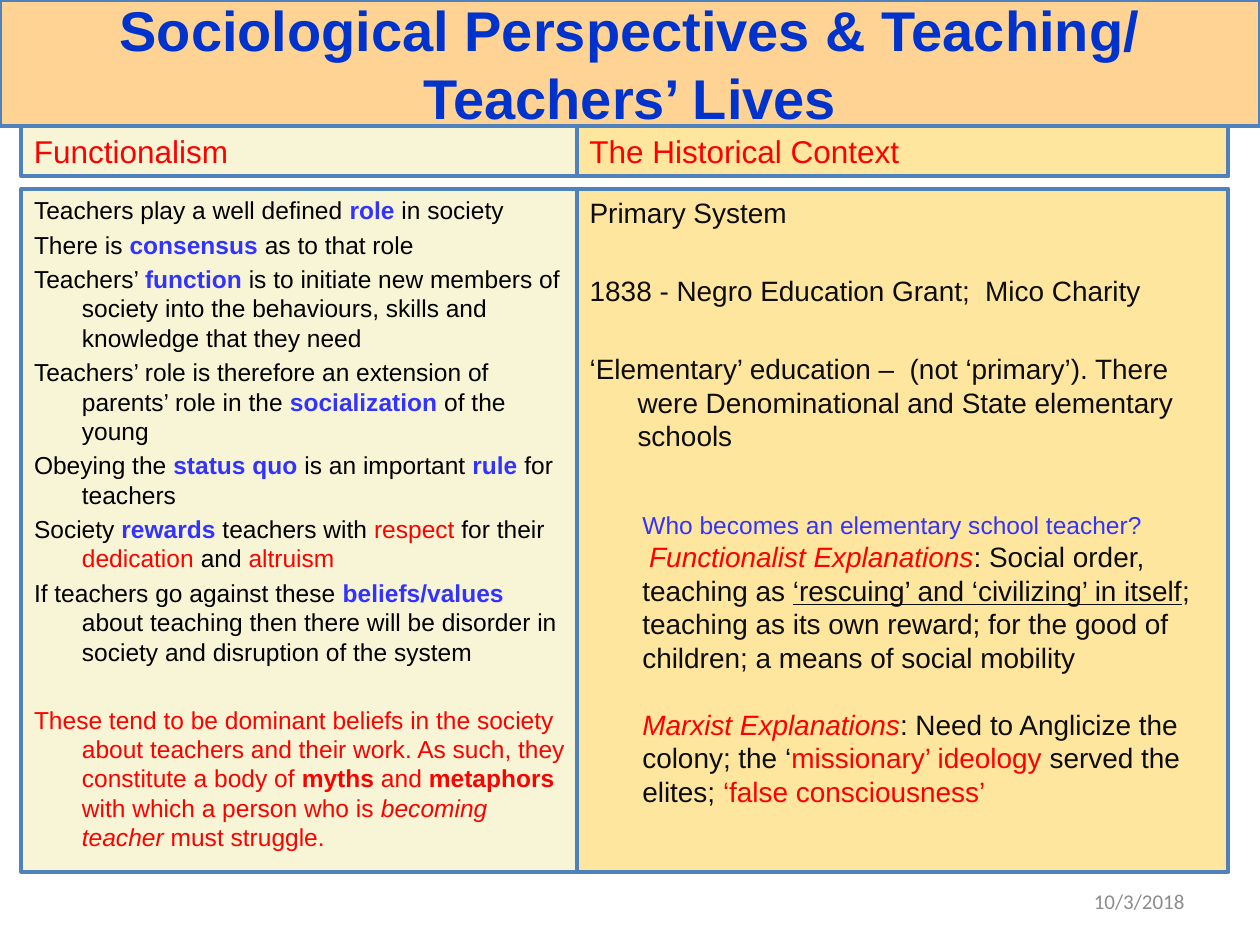
from dataclasses import dataclass

import pptx
import pptx.dml.color
import pptx.enum.shapes
import pptx.enum.text
import pptx.oxml.xmlchemy
import pptx.util
from pptx.util import Inches

BLACK, DARK, RED, BLUE = "000000", "0D0D0D", "FF0000", "3333FF"
TITLE_BLUE, BORDER, GREY = "0033CC", "4F81BD", "8C8C8C"
PEACH, CREAM, GOLD = "FFD393", "F7F5D5", "FFE69F"


@dataclass(frozen=True)
class Run:
    text: str
    color: str = BLACK
    bold: bool = False
    italic: bool = False
    underline: bool = False
    size: float | None = None


@dataclass(frozen=True)
class Paragraph:
    runs: tuple[Run, ...]
    space_before: float | None = None


@dataclass(frozen=True)
class Column:
    left: float
    width: float
    fill: str
    heading: str
    size: float
    paragraphs: tuple[Paragraph, ...]


def line(*runs: Run, space_before: float | None = None) -> Paragraph:
    return Paragraph(runs, space_before)


def key(text: str) -> Run:
    return Run(text, BLUE, bold=True)


def red(text: str, **style) -> Run:
    return Run(text, RED, **style)


def dark(text: str, **style) -> Run:
    return Run(text, DARK, **style)


FUNCTIONALISM = (
    line(Run("Teachers play a well defined "), key("role"), Run(" in society")),
    line(Run("There is "), key("consensus"), Run(" as to that role")),
    line(Run("Teachers’ "), key("function"),
         Run(" is to initiate new members of society into the behaviours, "
             "skills and knowledge that they need")),
    line(Run("Teachers’ role is therefore an extension of parents’ role in the "),
         key("socialization"), Run(" of the young")),
    line(Run("Obeying the "), key("status quo "), Run("is an important "),
         key("rule "), Run("for teachers")),
    line(Run("Society "), key("rewards"), Run(" teachers with "), red("respect"),
         Run(" for their "), red("dedication "), Run("and "), red("altruism")),
    line(Run("If teachers go against these "), key("beliefs/values"),
         Run(" about teaching then there will be disorder in society "
             "and disruption of the system")),
    line(red("These tend to be dominant beliefs in the society about teachers and "
             "their work. As such, they constitute a body of "),
         red("myths", bold=True), red(" and "), red("metaphors", bold=True),
         red(" with which a person who is "), red("becoming teacher", italic=True),
         red(" must struggle."), space_before=22),
)

HISTORY = (
    line(dark("Primary System")),
    line(dark("1838 - Negro Education Grant;  Mico Charity"), space_before=25.5),
    line(dark("‘Elementary’ education –  (not ‘primary’). There were "
              "Denominational and State elementary schools"), space_before=25.5),
)

EXPLANATIONS = (
    line(Run("Who becomes an elementary school teacher?", BLUE, size=14)),
    line(dark(" ", size=14), red("Functionalist Explanations", italic=True),
         dark(": Social order, teaching as "),
         dark("‘rescuing’ and ‘civilizing’ in itself", underline=True),
         dark("; teaching as its own reward; for the good of children; "
              "a means of social mobility")),
    line(red("Marxist Explanations", italic=True),
         dark(": Need to Anglicize the colony; the ‘"),
         red("missionary’ ideology "), dark("served the elites; "),
         red("‘false consciousness’"), space_before=19),
)

COLUMNS = (
    Column(0.17, 4.42, CREAM, "Functionalism", 14, FUNCTIONALISM),
    Column(4.58, 5.17, GOLD, "The Historical Context", 16, HISTORY),
)


def rgb(color: str) -> pptx.dml.color.RGBColor:
    return pptx.dml.color.RGBColor.from_string(color)


def add_text(paragraph, text: str, *, size: float, color: str, font: str = "Arial",
             bold: bool = False, italic: bool = False, underline: bool = False) -> None:
    run = paragraph.add_run()
    run.text = text
    run.font.name = font
    run.font.size = pptx.util.Pt(size)
    run.font.color.rgb = rgb(color)
    run.font.bold = bold
    run.font.italic = italic
    run.font.underline = underline


def place(shape, left: float, top: float, width: float, height: float) -> None:
    shape.left, shape.top = Inches(left), Inches(top)
    shape.width, shape.height = Inches(width), Inches(height)


def style_box(shape, fill: str) -> None:
    shape.fill.solid()
    shape.fill.fore_color.rgb = rgb(fill)
    shape.line.color.rgb = rgb(BORDER)
    shape.line.width = pptx.util.Pt(2.25)


def prepare_frame(shape, anchor=pptx.enum.text.MSO_ANCHOR.TOP):
    frame = shape.text_frame
    frame.word_wrap = True
    frame.auto_size = pptx.enum.text.MSO_AUTO_SIZE.NONE
    frame.vertical_anchor = anchor
    return frame


def fill_paragraphs(frame, paragraphs: tuple[Paragraph, ...], size: float,
                    hanging: bool = False) -> None:
    for index, content in enumerate(paragraphs):
        paragraph = frame.add_paragraph() if index else frame.paragraphs[0]
        if content.space_before is not None:
            paragraph.space_before = pptx.util.Pt(content.space_before)
        if hanging:
            properties = paragraph._p.get_or_add_pPr()
            properties.set("marL", str(Inches(0.38)))
            properties.set("indent", str(-Inches(0.38)))
            properties.append(pptx.oxml.xmlchemy.OxmlElement("a:buNone"))
        for run in content.runs:
            add_text(paragraph, run.text, size=run.size or size, color=run.color,
                     bold=run.bold, italic=run.italic, underline=run.underline)


def draw_title(slide) -> None:
    title = slide.shapes.title
    place(title, 0, 0, 10, 1)
    style_box(title, PEACH)
    paragraph = prepare_frame(title, pptx.enum.text.MSO_ANCHOR.MIDDLE).paragraphs[0]
    paragraph.alignment = pptx.enum.text.PP_ALIGN.CENTER
    add_text(paragraph, "Sociological Perspectives & Teaching/ Teachers’ Lives",
             size=32, color=TITLE_BLUE, bold=True)


def draw_column(slide, column: Column, body) -> None:
    place(body, column.left, 1.5, column.width, 5.42)
    style_box(body, column.fill)
    fill_paragraphs(prepare_frame(body), column.paragraphs, column.size, hanging=True)

    heading = slide.shapes.add_shape(
        pptx.enum.shapes.MSO_SHAPE.RECTANGLE, Inches(column.left), Inches(1),
        Inches(column.width), Inches(0.4))
    heading.shadow.inherit = False
    style_box(heading, column.fill)
    paragraph = prepare_frame(heading).paragraphs[0]
    paragraph.alignment = pptx.enum.text.PP_ALIGN.LEFT
    add_text(paragraph, column.heading, size=18, color=RED)


def draw_date(slide) -> None:
    date = slide.shapes.add_textbox(Inches(7.17), Inches(6.95), Inches(2.33), Inches(0.4))
    paragraph = prepare_frame(date, pptx.enum.text.MSO_ANCHOR.MIDDLE).paragraphs[0]
    paragraph.alignment = pptx.enum.text.PP_ALIGN.RIGHT
    add_text(paragraph, "10/3/2018", size=12, color=GREY, font="Calibri")


def main() -> None:
    presentation = pptx.Presentation()
    presentation.slide_width, presentation.slide_height = Inches(10), Inches(7.5)
    slide = presentation.slides.add_slide(presentation.slide_layouts[3])
    draw_title(slide)
    for index, column in enumerate(COLUMNS, start=1):
        draw_column(slide, column, slide.placeholders[index])
    draw_date(slide)
    explanations = slide.shapes.add_textbox(Inches(5), Inches(4), Inches(4.67), Inches(2.49))
    fill_paragraphs(prepare_frame(explanations), EXPLANATIONS, 16)
    presentation.save("out.pptx")


if __name__ == "__main__":
    main()
